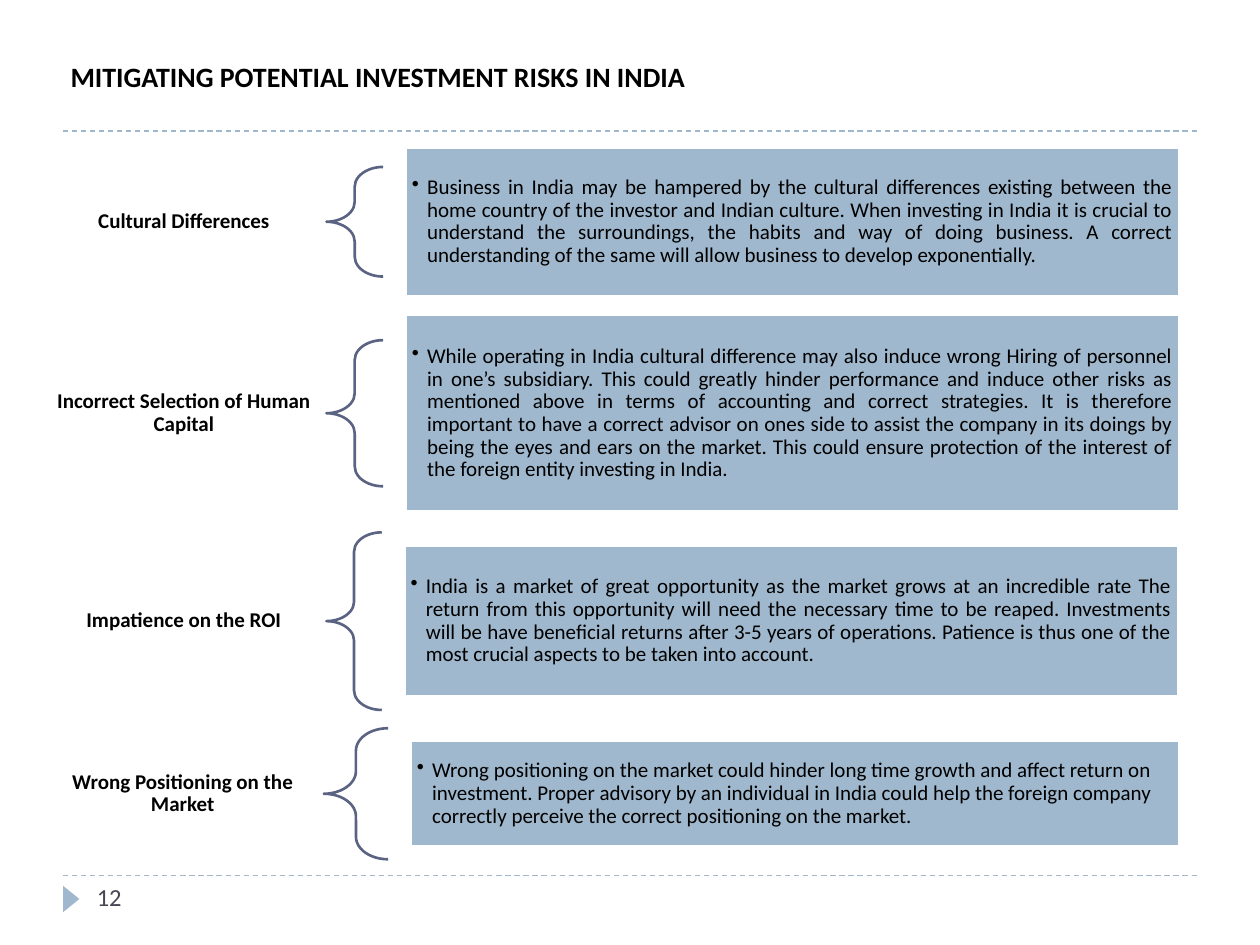
import pptx
import pptx.util
import pptx.dml.color
import pptx.enum.dml
import pptx.enum.shapes
import pptx.enum.text
import pptx.oxml.ns
from lxml import etree

Inches = pptx.util.Inches
Pt = pptx.util.Pt
SHAPE = pptx.enum.shapes.MSO_SHAPE
ALIGN = pptx.enum.text.PP_ALIGN
ANCHOR = pptx.enum.text.MSO_ANCHOR

COLORS = {
    "panel": "9FB8CD",
    "brace": "5B6383",
    "number": "464653",
    "text": "000000",
    "white": "FFFFFF",
}
FONT = "Calibri"

RISKS = [
    ("Cultural Differences",
     "Business in India may be hampered by the cultural differences existing between the home country of the investor and Indian culture. When investing in India it is crucial to understand the surroundings, the habits and way of doing business. A correct understanding of the same will allow business to develop exponentially.",
     1.76, (2.59, 0.45, 0.87), (3.22, 6.14, 1.18), ALIGN.JUSTIFY),
    ("Incorrect Selection of Human Capital",
     "While operating in India cultural difference may also induce wrong Hiring of personnel in one’s subsidiary. This could greatly hinder performance and induce other risks as mentioned above in terms of accounting and correct strategies. It is therefore important to have a correct advisor on ones side to assist the company in its doings by being the eyes and ears on the market. This could ensure protection of the interest of the foreign entity investing in India.",
     3.28, (2.59, 0.45, 1.16), (3.22, 6.14, 1.56), ALIGN.JUSTIFY),
    ("Impatience on the ROI",
     "India is a market of great opportunity as the market grows at an incredible rate The return from this opportunity will need the necessary time to be reaped. Investments will be have beneficial returns after 3-5 years of operations. Patience is thus one of the most crucial aspects to be taken into account.",
     4.93, (2.59, 0.44, 1.41), (3.21, 6.14, 1.2), ALIGN.JUSTIFY),
    ("Wrong Positioning on the Market",
     "Wrong positioning on the market could hinder long time growth and affect return on investment. Proper advisory by an individual in India could help the foreign company correctly perceive the correct positioning on the market.",
     6.3, (2.57, 0.51, 1.04), (3.26, 6.1, 0.84), ALIGN.LEFT),
]


def rgb(name):
    return pptx.dml.color.RGBColor.from_string(COLORS[name])


def place(sp, left, top, width, height):
    sp.left, sp.top = Inches(left), Inches(top)
    sp.width, sp.height = Inches(width), Inches(height)


def write(tf, text, size, align=ALIGN.LEFT, bold=False, color="text",
          anchor=ANCHOR.MIDDLE, spacing=0.9, margins=(0.1, 0.05)):
    tf.word_wrap = True
    tf.auto_size = pptx.enum.text.MSO_AUTO_SIZE.NONE
    tf.vertical_anchor = anchor
    tf.margin_left = tf.margin_right = Inches(margins[0])
    tf.margin_top = tf.margin_bottom = Inches(margins[1])
    p = tf.paragraphs[0]
    p.alignment = align
    p.line_spacing = spacing
    r = p.add_run()
    r.text = text
    r.font.name = FONT
    r.font.size = Pt(size)
    r.font.bold = bold
    r.font.color.rgb = rgb(color)
    return p


def add_bullet(p, indent):
    pPr = p._p.get_or_add_pPr()
    pPr.set("marL", str(Inches(indent)))
    pPr.set("indent", str(Inches(-indent)))
    bu = etree.SubElement(pPr, pptx.oxml.ns.qn("a:buChar"))
    bu.set("char", "•")


def add_text(s, box, text, size, **style):
    sp = s.shapes.add_textbox(*map(Inches, box))
    write(sp.text_frame, text, size, **style)


def add_shape(s, kind, box, fill=None, line=None):
    sp = s.shapes.add_shape(kind, *map(Inches, box))
    sp.shadow.inherit = False
    if fill:
        sp.fill.solid()
        sp.fill.fore_color.rgb = rgb(fill)
    else:
        sp.fill.background()
    if line:
        sp.line.color.rgb = rgb(line)
        sp.line.width = Pt(1.5)
    else:
        sp.line.fill.background()
    return sp


def add_rule(s, y):
    c = s.shapes.add_connector(pptx.enum.shapes.MSO_CONNECTOR.STRAIGHT,
                               Inches(0.5), Inches(y), Inches(9.5), Inches(y))
    c.line.color.rgb = rgb("panel")
    c.line.width = Pt(0.75)
    c.line.dash_style = pptx.enum.dml.MSO_LINE.DASH
    etree.SubElement(c._element.spPr, pptx.oxml.ns.qn("a:effectLst"))


def add_risk(s, label, text, middle, brace, panel, align):
    def centred(left, width, height):
        return left, middle - height / 2, width, height

    add_text(s, centred(0.33, brace[0] - 0.33, 0.87), label, 12,
             align=ALIGN.CENTER, bold=True, margins=(0.09, 0.03))
    sp = add_shape(s, SHAPE.LEFT_BRACE, centred(*brace), line="brace")
    sp.adjustments[0] = 0.35
    sp = add_shape(s, SHAPE.RECTANGLE, centred(*panel), "panel", "white")
    p = write(sp.text_frame, text, 12, align=align, margins=(0.05, 0.05))
    add_bullet(p, 0.12)


def add_title(s, text):
    title = s.shapes.title
    place(title, 0.46, 0.03, 8.77, 1.08)
    write(title.text_frame, text, 16, bold=True, spacing=Pt(24))


def add_footer(s):
    sp = add_shape(s, SHAPE.ISOSCELES_TRIANGLE, (0.46, 7.07, 0.21, 0.13), "panel")
    sp.rotation = 90
    add_text(s, (0.67, 6.95, 2.17, 0.4), "12", 14, color="number",
             anchor=ANCHOR.TOP, spacing=1.0)


def main():
    prs = pptx.Presentation()
    prs.slide_width, prs.slide_height = Inches(10), Inches(7.5)
    s = prs.slides.add_slide(prs.slide_layouts[5])
    add_title(s, "MITIGATING POTENTIAL INVESTMENT RISKS IN INDIA")
    for y in (1.04, 6.95):
        add_rule(s, y)
    add_footer(s)
    for risk in RISKS:
        add_risk(s, *risk)
    prs.save("out.pptx")


if __name__ == "__main__":
    main()
